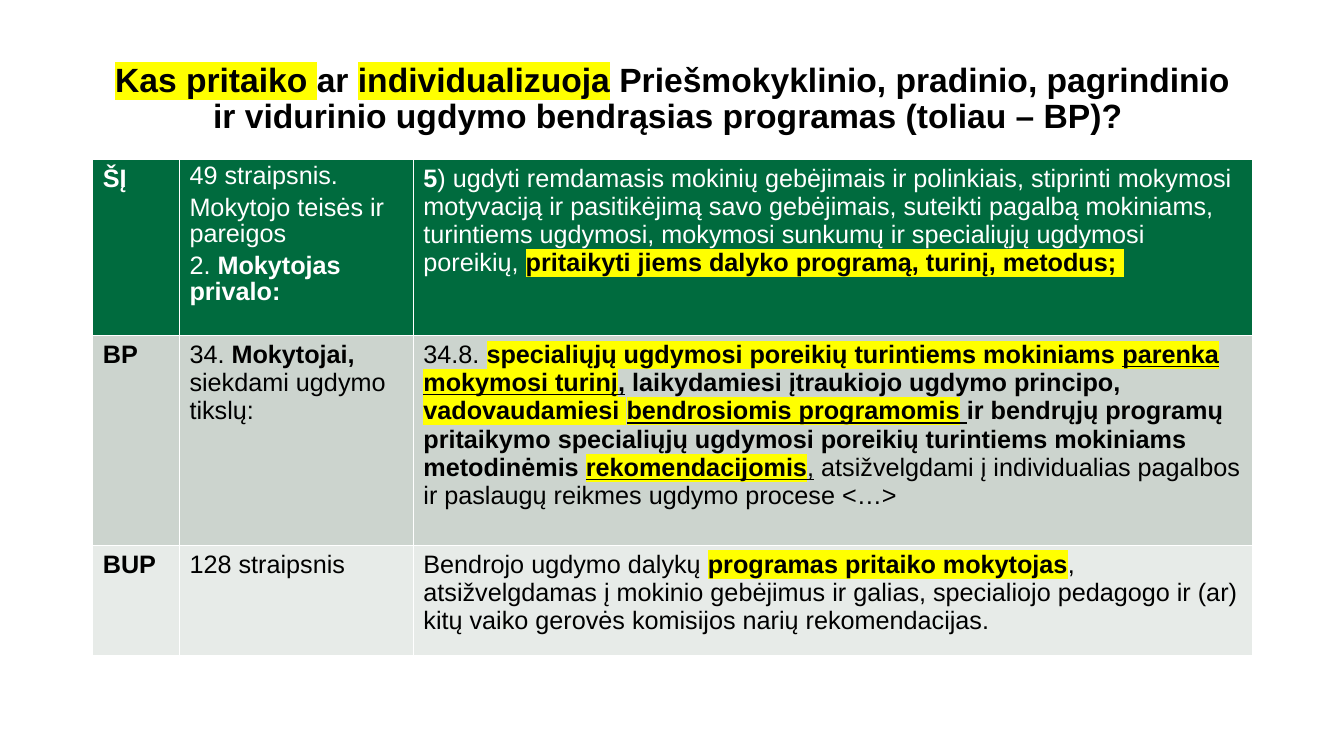
from pptx import Presentation
from pptx.util import Inches, Pt
from pptx.dml.color import RGBColor
from pptx.enum.text import PP_ALIGN, MSO_ANCHOR
from lxml import etree

# Content: runs are (text, style); b = bold, u = underlined, h = highlighted
TITLE = [
    ("Kas pritaiko ", "bh"), ("ar ", "b"), ("individualizuoja", "bh"),
    (" Priešmokyklinio, pradinio, pagrindinio ir vidurinio ugdymo "
     "bendrąsias programas (toliau – BP)? ", "b"),
]
# Each row holds cells, each cell holds paragraphs, each paragraph holds runs
ROWS = [
    [
        [[("ŠĮ", "b")]],
        [[("49 straipsnis. ", "")],
         [("Mokytojo teisės ir pareigos", "")],
         [("2. ", ""), ("Mokytojas privalo:", "b")]],
        [[("5", "b"),
          (") ugdyti remdamasis mokinių gebėjimais ir polinkiais, stiprinti mokymosi "
           "motyvaciją ir pasitikėjimą savo gebėjimais, suteikti pagalbą mokiniams, "
           "turintiems ugdymosi, mokymosi sunkumų ir specialiųjų ugdymosi poreikių, ", ""),
          ("pritaikyti jiems dalyko programą, turinį, metodus; ", "bh")]],
    ],
    [
        [[("BP", "b")]],
        [[("34. ", ""), ("Mokytojai, ", "b"), ("siekdami ugdymo tikslų:", "")]],
        [[("34.8. ", ""),
          ("specialiųjų ugdymosi poreikių turintiems mokiniams ", "bh"),
          ("parenka mokymosi turinį", "buh"), (",", "bu"),
          (" laikydamiesi įtraukiojo ugdymo principo, ", "b"),
          ("vadovaudamiesi ", "bh"), ("bendrosiomis programomis", "buh"), (" ", "bu"),
          ("ir bendrųjų programų pritaikymo specialiųjų ugdymosi poreikių "
           "turintiems mokiniams metodinėmis ", "b"),
          ("rekomendacijomis", "buh"), (",", "u"),
          (" atsižvelgdami į individualias pagalbos ir paslaugų reikmes "
           "ugdymo procese <…>", "")]],
    ],
    [
        [[("BUP", "b")]],
        [[("128 straipsnis", "")]],
        [[("Bendrojo ugdymo dalykų ", ""), ("programas pritaiko mokytojas", "bh"),
          (", atsižvelgdamas į mokinio gebėjimus ir galias, specialiojo pedagogo ir (ar) "
           "kitų vaiko gerovės komisijos narių rekomendacijas.", "")]],
    ],
]

# Layout in inches
SLIDE_W, SLIDE_H = 13.33, 7.5
LEFT, WIDTH = 0.92, 11.5
TITLE_TOP, TITLE_H = 0.4, 1.18
COL_W = [0.86, 2.32, 8.32]
ROW_H = [1.75, 2.08, 1.09]

THEME = {
    "font": "Arial", "title": Pt(24), "body": Pt(18),
    "dark": RGBColor(0, 0, 0), "light": RGBColor(255, 255, 255),
    "highlight": "FFFF00",
    "rows": [RGBColor.from_string(c) for c in ("006B3E", "CCD4CE", "E7EBE8")],
}
NS = "http://schemas.openxmlformats.org/drawingml/2006/main"


def add_runs(p, runs, size, color):
    for text, style in runs:
        r = p.add_run()
        r.text = text
        f = r.font
        f.size, f.bold, f.underline = size, "b" in style, "u" in style
        f.color.rgb = THEME["dark"] if "h" in style else color
        if "h" in style:
            mark = etree.SubElement(r._r.get_or_add_rPr(), f"{{{NS}}}highlight")
            etree.SubElement(mark, f"{{{NS}}}srgbClr", val=THEME["highlight"])
        f.name = THEME["font"]


prs = Presentation()
prs.slide_width, prs.slide_height = Inches(SLIDE_W), Inches(SLIDE_H)
s = prs.slides.add_slide(prs.slide_layouts[5])

# Title
title = s.shapes.title
title.left, title.top = Inches(LEFT), Inches(TITLE_TOP)
title.width, title.height = Inches(WIDTH), Inches(TITLE_H)
tf = title.text_frame
tf.word_wrap = True
tf.vertical_anchor = MSO_ANCHOR.MIDDLE
p = tf.paragraphs[0]
p.alignment, p.line_spacing = PP_ALIGN.CENTER, 0.9
add_runs(p, TITLE, THEME["title"], THEME["dark"])

# Table: its built-in style draws the white rules
table = s.shapes.add_table(
    len(ROW_H), len(COL_W), Inches(LEFT), Inches(TITLE_TOP + TITLE_H),
    Inches(WIDTH), Inches(sum(ROW_H))).table
for col, w in zip(table.columns, COL_W):
    col.width = Inches(w)
for i, (row, h) in enumerate(zip(table.rows, ROW_H)):
    row.height = Inches(h)
    color = THEME["dark"] if i else THEME["light"]
    for cell, paragraphs in zip(row.cells, ROWS[i]):
        cell.fill.solid()
        cell.fill.fore_color.rgb = THEME["rows"][i]
        tf = cell.text_frame
        for n, runs in enumerate(paragraphs):
            p = tf.add_paragraph() if n else tf.paragraphs[0]
            if len(paragraphs) > 1:
                p.line_spacing, p.space_after = 0.9, Pt(5)
            add_runs(p, runs, THEME["body"], color)

prs.save("out.pptx")
